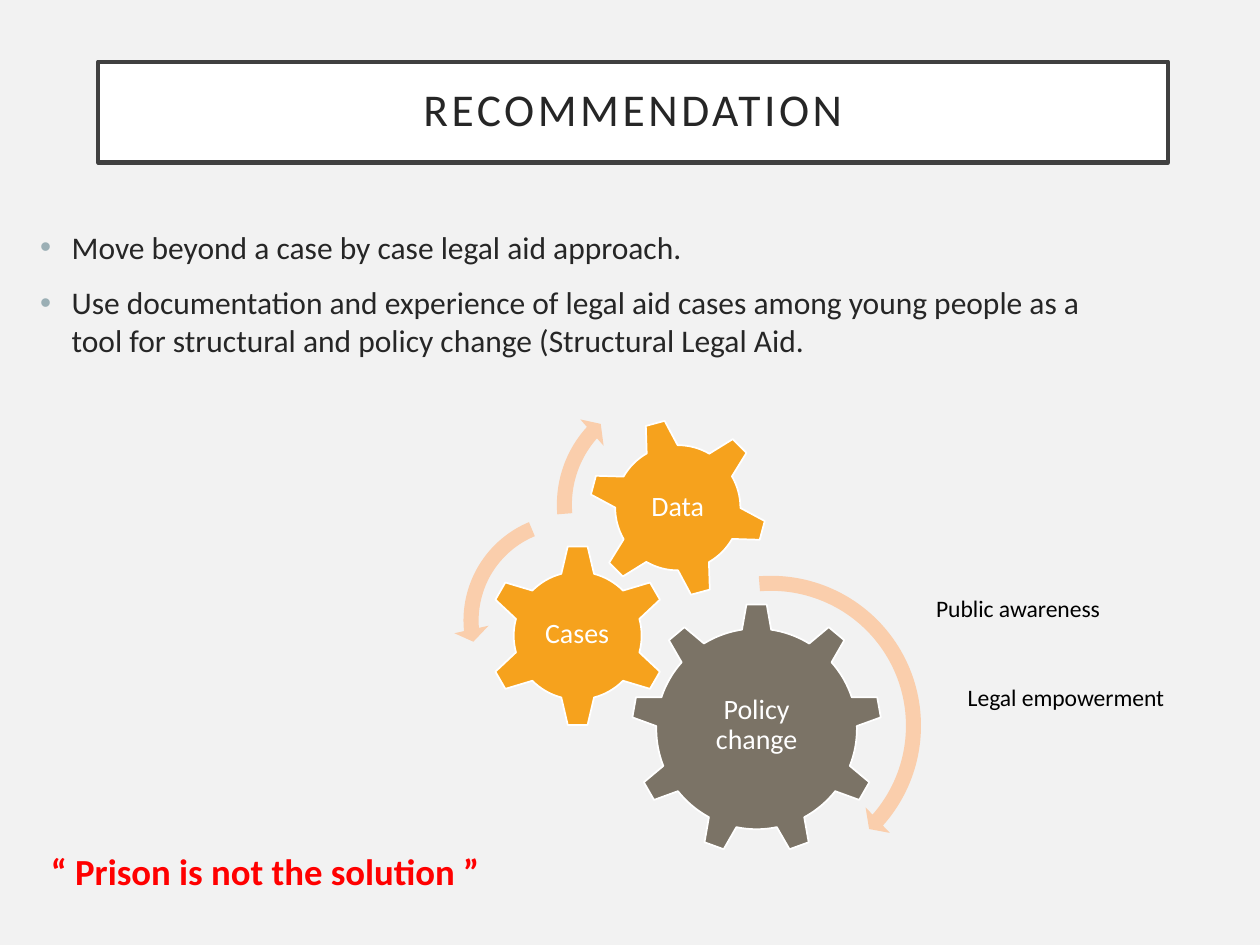
from lxml import etree
from pptx import Presentation
from pptx import util as u
from pptx.dml.color import RGBColor
from pptx.enum import shapes, text
from pptx.oxml import ns

COLORS = {
    "background": "F2F2F2", "white": "FFFFFF", "frame": "404040",
    "body": "262626", "bullet": "9BAFB5", "gray": "7B7366",
    "orange": "F6A21D", "peach": "FACEAC", "red": "FF0000", "black": "000000",
}
KIND = shapes.MSO_SHAPE

prs = Presentation()
prs.slide_width, prs.slide_height = u.Inches(10), u.Inches(7.5)
slide = prs.slides.add_slide(prs.slide_layouts[6])
slide.background.fill.solid()
slide.background.fill.fore_color.rgb = RGBColor.from_string(COLORS["background"])


def add_figure(kind, box, fill, line=None, width=1):
    figure = slide.shapes.add_shape(kind, *map(u.Inches, box))
    figure.shadow.inherit = False
    figure.fill.solid()
    figure.fill.fore_color.rgb = RGBColor.from_string(COLORS[fill])
    if line:
        figure.line.color.rgb = RGBColor.from_string(COLORS[line])
        figure.line.width = u.Pt(width)
    else:
        figure.line.fill.background()
    return figure


def write(holder, words, size, color, inset=None, spacing=None, bold=False,
          align=text.PP_ALIGN.CENTER, anchor=text.MSO_ANCHOR.MIDDLE):
    frame = holder.text_frame
    frame.word_wrap = True
    frame.vertical_anchor = anchor
    if inset is not None:
        frame.margin_left = frame.margin_right = u.Inches(inset)
        frame.margin_top = frame.margin_bottom = u.Inches(inset)
    frame.text = words
    for paragraph in frame.paragraphs:
        paragraph.alignment = align
        paragraph.line_spacing = spacing
        for run in paragraph.runs:
            run.font.name = "Calibri"
            run.font.size = u.Pt(size)
            run.font.bold = bold
            run.font.color.rgb = RGBColor.from_string(COLORS[color])
    return frame


# Title
title = add_figure(KIND.RECTANGLE, (0.78, 0.49, 8.49, 0.8), "white", "frame", 2.5)
heading = write(title, "RECOMMENDATION", 26, "body", inset=0.2, spacing=0.9)
heading.paragraphs[0].runs[0].font._element.set("spc", "200")

# Bulleted recommendations
points = [
    "Move beyond a case by case legal aid approach.",
    "Use documentation and experience of legal aid cases among young people as a "
    "tool for structural and policy change (Structural Legal Aid.",
]
body = slide.shapes.add_textbox(*map(u.Inches, (0.22, 1.76, 8.79, 4.2)))
bullets = write(body, "\n".join(points), 18, "body",
                align=text.PP_ALIGN.LEFT, anchor=text.MSO_ANCHOR.TOP)
for point in bullets.paragraphs:
    point.space_before = u.Pt(10)
    props = point._p.get_or_add_pPr()
    props.set("marL", str(u.Inches(0.25)))
    props.set("indent", str(-u.Inches(0.25)))
    bullet_color = etree.SubElement(props, ns.qn("a:buClr"))
    etree.SubElement(bullet_color, ns.qn("a:srgbClr"), val=COLORS["bullet"])
    etree.SubElement(props, ns.qn("a:buFont"), typeface="Arial")
    etree.SubElement(props, ns.qn("a:buChar"), char="•")

# Gears with their labels: kind, left, top, size, rotation, fill, label, label box
gears = [
    (KIND.GEAR_9, 5.01, 4.79, 1.99, 0, "gray", "Policy change", (5.41, 5.25, 1.19, 1.02)),
    (KIND.GEAR_6, 3.86, 4.32, 1.45, 0, "orange", "Cases", (4.22, 4.68, 0.72, 0.71)),
    (KIND.GEAR_6, 4.67, 3.32, 1.42, 345, "orange", "Data", (4.98, 3.63, 0.8, 0.8)),
]
for kind, left, top, size, rotation, fill, label, label_box in gears:
    gear = add_figure(kind, (left, top, size, size), fill, "white")
    gear.rotation = rotation
    caption = slide.shapes.add_textbox(*map(u.Inches, label_box))
    write(caption, label, 16, "white", inset=0.02, spacing=0.9)

# Turning arrows: kind, left, top, size, band %, three angles in degrees, head %
arrows = [
    (KIND.CIRCULAR_ARROW, 4.85, 4.49, 2.54, 4.7, (4.98, 41.51, 265.3), 5.5),
    (KIND.LEFT_CIRCULAR_ARROW, 3.6, 4, 1.85, 6.5, (7.17, 174.82, 247.3), 7.5),
    (KIND.CIRCULAR_ARROW, 4.34, 3.01, 1.99, 6, (6.57, 221.9, 175.14), 7),
]
for kind, left, top, size, band, angles, head in arrows:
    arrow = add_figure(kind, (left, top, size, size), "peach")
    # One degree is 60000 units; adjustments count in 100000 units
    settings = [band / 100, *(angle * 0.6 for angle in angles), head / 100]
    for index, setting in enumerate(settings):
        arrow.adjustments[index] = setting

# Closing quote and side remarks
remarks = [
    ("“ Prison is not the solution ”", (-0.41, 6.33, 5.03, 1.17), 21, "red", True),
    ("Public awareness", (6.83, 4.44, 2.5, 0.77), 13.5, "black", False),
    ("Legal empowerment", (7.16, 5.13, 2.6, 0.8), 13.5, "black", False),
]
for words, box, size, color, bold in remarks:
    remark = slide.shapes.add_textbox(*map(u.Inches, box))
    write(remark, words, size, color, bold=bold)

prs.save("out.pptx")
